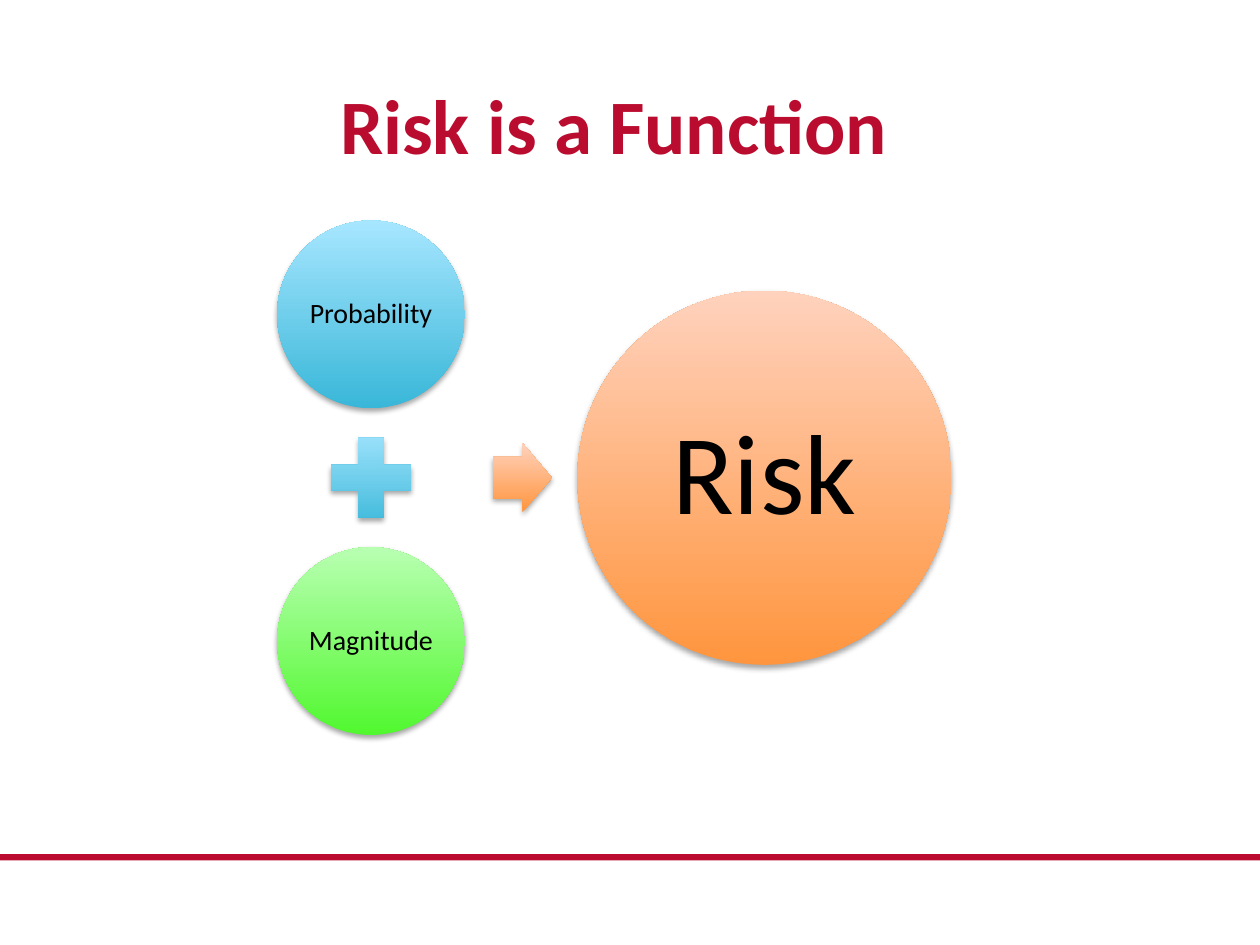
"""Build a slide showing risk as a function of probability and magnitude."""
from lxml.etree import SubElement
from pptx import Presentation
from pptx.dml.color import RGBColor
from pptx.enum.shapes import MSO_SHAPE
from pptx.enum.text import MSO_ANCHOR, PP_ALIGN
from pptx.oxml.ns import qn
from pptx.util import Pt

TITLE = "Risk is a Function"
CRIMSON = "BA0C2F"
BLUE = ("39B7D8", "A7E6FF")
GREEN = ("51F82F", "B9FFB2")
ORANGE = ("FF953E", "FFD2BD")

MIDDLE = 273
FACTOR_X, FACTOR_SIZE = 212, 107.3
PLUS_SIZE, FACTOR_GAP = 62, 8.7
ARROW_WIDTH, ARROW_HEIGHT, ARROW_GAP_BEFORE, ARROW_GAP_AFTER = 33.8, 39.6, 16, 14.5
RISK_SIZE = 213.8

FACTOR_STEP = (FACTOR_SIZE + PLUS_SIZE) / 2 + FACTOR_GAP
ARROW_X = FACTOR_X + FACTOR_SIZE / 2 + ARROW_GAP_BEFORE + ARROW_WIDTH / 2
RISK_X = ARROW_X + ARROW_WIDTH / 2 + ARROW_GAP_AFTER + RISK_SIZE / 2

DIAGRAM = [
    (MSO_SHAPE.OVAL, FACTOR_X, MIDDLE - FACTOR_STEP, FACTOR_SIZE, FACTOR_SIZE, BLUE, "Probability", 16, 1.5),
    (MSO_SHAPE.MATH_PLUS, FACTOR_X, MIDDLE, PLUS_SIZE, PLUS_SIZE, BLUE, "", 0, 0),
    (MSO_SHAPE.OVAL, FACTOR_X, MIDDLE + FACTOR_STEP, FACTOR_SIZE, FACTOR_SIZE, GREEN, "Magnitude", 16, 1.5),
    (MSO_SHAPE.RIGHT_ARROW, ARROW_X, MIDDLE, ARROW_WIDTH, ARROW_HEIGHT, ORANGE, "", 0, 0),
    (MSO_SHAPE.OVAL, RISK_X, MIDDLE, RISK_SIZE, RISK_SIZE, ORANGE, "Risk", 65, 6.5),
]


def color(value):
    """Turn a hex string into a colour."""
    return RGBColor.from_string(value)


def set_attributes(target, values):
    """Set each named attribute of the target."""
    for name, value in values.items():
        setattr(target, name, value)


def write_text(shape, text, size, hex_color, bold=False, margin=3.6, line_spacing=1.0):
    """Write one centred paragraph in the shape."""
    frame = shape.text_frame
    margins = {f"margin_{side}": Pt(margin) for side in ("left", "top", "right", "bottom")}
    set_attributes(frame, {"word_wrap": True, "vertical_anchor": MSO_ANCHOR.MIDDLE, **margins})
    paragraph = frame.paragraphs[0]
    set_attributes(paragraph, {"alignment": PP_ALIGN.CENTER, "line_spacing": line_spacing})
    run = paragraph.add_run()
    run.text = text
    set_attributes(run.font, {"name": "Calibri", "size": Pt(size), "bold": bold})
    run.font.color.rgb = color(hex_color)


def add_plain_shape(slide, kind, left, top, width, height):
    """Add a preset shape without line or shadow."""
    shape = slide.shapes.add_shape(kind, Pt(left), Pt(top), Pt(width), Pt(height))
    shape.shadow.inherit = False
    shape.line.fill.background()
    return shape


def add_shadow(shape):
    """Give the shape a soft shadow below it."""
    effects = shape._element.spPr.find(qn("a:effectLst"))
    shadow = SubElement(effects, qn("a:outerShdw"), blurRad=str(Pt(3.1)), dist=str(Pt(1.8)),
                        dir="5400000", rotWithShape="0")
    shade = SubElement(shadow, qn("a:srgbClr"), val="000000")
    SubElement(shade, qn("a:alpha"), val="35000")


def add_diagram_part(slide, kind, center_x, center_y, width, height, colors, text, size, margin):
    """Add a shaded shape around its centre, with its label if any."""
    shape = add_plain_shape(slide, kind, center_x - width / 2, center_y - height / 2, width, height)
    shape.fill.gradient()
    shape.fill.gradient_angle = 90
    for stop, value in zip(shape.fill.gradient_stops, colors):
        stop.color.rgb = color(value)
    add_shadow(shape)
    if kind == MSO_SHAPE.RIGHT_ARROW:
        shape.adjustments[0] = 0.6
    if text:
        write_text(shape, text, size, "000000", margin=margin, line_spacing=0.9)


def main():
    """Build and save the slide."""
    presentation = Presentation()
    set_attributes(presentation, {"slide_width": Pt(720), "slide_height": Pt(540)})
    slide = presentation.slides.add_slide(presentation.slide_layouts[6])

    rule = add_plain_shape(slide, MSO_SHAPE.RECTANGLE, 0, 488, 720, 3.6)
    rule.fill.solid()
    rule.fill.fore_color.rgb = color(CRIMSON)

    title = slide.shapes.add_textbox(Pt(27), Pt(35.5), Pt(648), Pt(70.5))
    write_text(title, TITLE, 44, CRIMSON, bold=True)

    for part in DIAGRAM:
        add_diagram_part(slide, *part)
    presentation.save("out.pptx")


if __name__ == "__main__":
    main()
